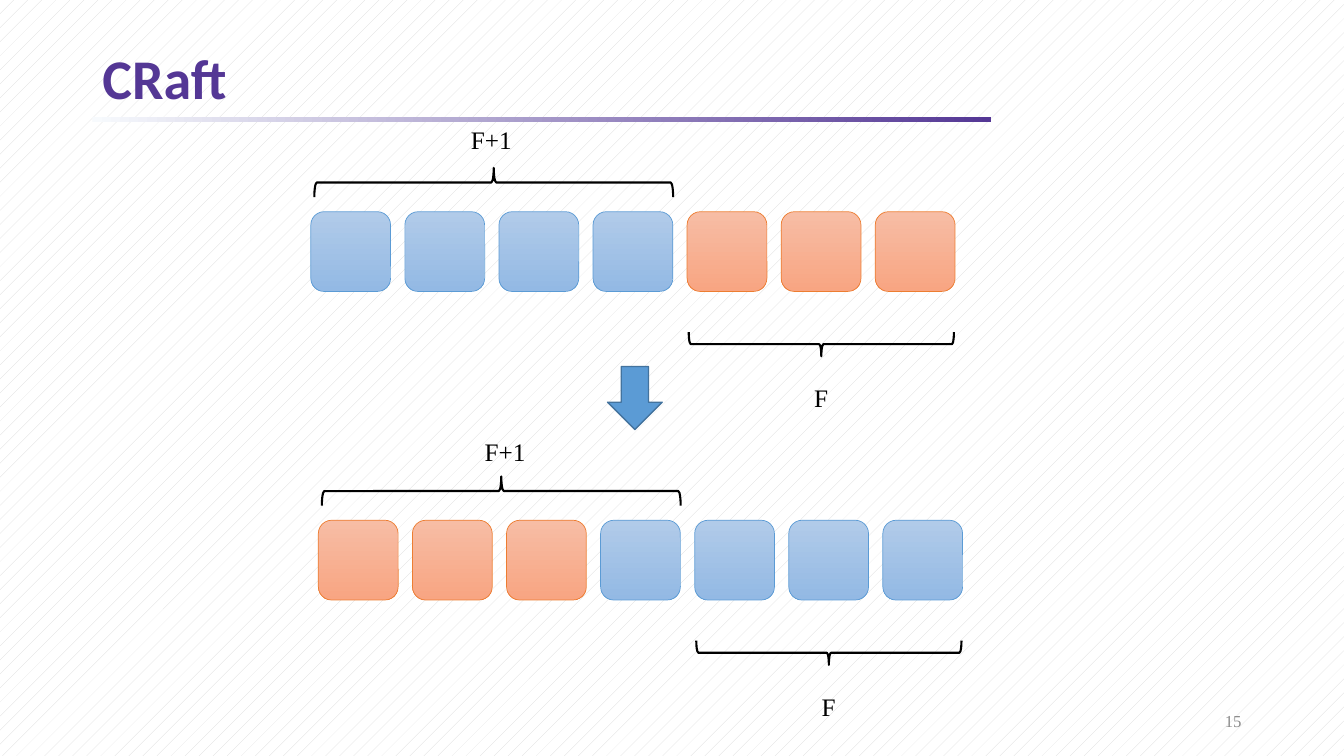
from pptx import Presentation
from pptx.dml.color import RGBColor
from pptx.enum import dml, shapes, text
from pptx.util import Pt

PURPLE = "543795"
BLUE = ("B1CBE9", "93B9E4", "5B9BD5")
ORANGE = ("F7BDA5", "F8A582", "ED7D31")
SIZE, PITCH = 57, 67.2


def rgb(value):
    """Return the colour for a hex string."""
    return RGBColor.from_string(value)


def add_shape(slide, kind, x, y, w, h, line=None, weight=1):
    """Add a preset shape without shadow, with an optional outline."""
    sp = slide.shapes.add_shape(kind, Pt(x), Pt(y), Pt(w), Pt(h))
    sp.shadow.inherit = False
    if line:
        sp.line.color.rgb = rgb(line)
        sp.line.width = Pt(weight)
    else:
        sp.line.fill.background()
    return sp


def fill_gradient(sp, start, end, angle):
    """Fill a shape with a two-colour linear gradient."""
    sp.fill.gradient()
    sp.fill.gradient_angle = angle
    for stop, value, position in zip(sp.fill.gradient_stops, (start, end), (0, 1)):
        stop.color.rgb = rgb(value)
        stop.position = position


def add_label(slide, x, y, w, words, size=18, color="000000", align=text.PP_ALIGN.LEFT):
    """Add a one-line label."""
    tf = slide.shapes.add_textbox(Pt(x), Pt(y), Pt(w), Pt(29)).text_frame
    tf.word_wrap = False
    tf.vertical_anchor = text.MSO_ANCHOR.MIDDLE
    p = tf.paragraphs[0]
    p.text = words
    p.alignment = align
    p.font.name = "Times New Roman"
    p.font.size = Pt(size)
    p.font.color.rgb = rgb(color)


def add_brace(slide, x, y, w, h, rotation):
    """Add a horizontal brace that fills the given box."""
    sp = add_shape(slide, shapes.MSO_SHAPE.LEFT_BRACE, x + (w - h) / 2,
                   y + (h - w) / 2, h, w, "000000", 1.5)
    sp.fill.background()
    sp.rotation = rotation


def add_header(slide, x, y, w, h):
    """Place the title and the fading rule under it."""
    bar = add_shape(slide, shapes.MSO_SHAPE.RECTANGLE, x, y + 52.5, 642, 3.6)
    fill_gradient(bar, "F7FAFD", PURPLE, 0)
    title = slide.shapes.title
    title.left, title.top, title.width, title.height = Pt(x), Pt(y), Pt(w), Pt(h)
    tf = title.text_frame
    tf.vertical_anchor = text.MSO_ANCHOR.MIDDLE
    p = tf.paragraphs[0]
    p.text = "CRaft"
    p.alignment = text.PP_ALIGN.LEFT
    p.line_spacing = 0.9
    p.font.name = "Calibri"
    p.font.size = Pt(40)
    p.font.bold = True
    p.font.color.rgb = rgb(PURPLE)


def add_fragment_row(slide, x, y, palettes, label_x, label_y):
    """Draw a row of fragments with its F+1 and F braces."""
    for i, (start, end, line) in enumerate(palettes):
        sp = add_shape(slide, shapes.MSO_SHAPE.ROUNDED_RECTANGLE,
                       x + i * PITCH, y, SIZE, SIZE, line, 0.5)
        fill_gradient(sp, start, end, 270)
    add_brace(slide, x + 2.5, y - 31.3, 256.3, 20.9, 90)
    add_brace(slide, x + 270, y + 86, 189.4, 17.3, 270)
    add_label(slide, x + label_x, y + label_y, 44, "F+1")
    add_label(slide, x + 352.4, y + 118.4, 24.5, "F")


def main():
    """Build and save the slide."""
    prs = Presentation()
    prs.slide_width, prs.slide_height = Pt(960), Pt(540)
    slide = prs.slides.add_slide(prs.slide_layouts[5])
    fill = slide.background.fill
    fill.patterned()
    fill.pattern = dml.MSO_PATTERN.PERCENT_5
    fill.fore_color.rgb = rgb("D9D9D9")
    fill.back_color.rgb = rgb("FFFFFF")
    add_header(slide, 66, 31, 828, 54)
    add_fragment_row(slide, 222, 151.2, [BLUE] * 4 + [ORANGE] * 3, 107.3, -66.2)
    arrow = add_shape(slide, shapes.MSO_SHAPE.DOWN_ARROW, 434, 261.8, 39, 45, "43739E")
    arrow.fill.solid()
    arrow.fill.fore_color.rgb = rgb("5B9BD5")
    add_fragment_row(slide, 227.4, 371.6, [ORANGE] * 3 + [BLUE] * 4, 111.7, -63.4)
    add_label(slide, 678, 500.6, 216, "15", 12, "8C8C8C", text.PP_ALIGN.RIGHT)
    prs.save("out.pptx")


if __name__ == "__main__":
    main()
